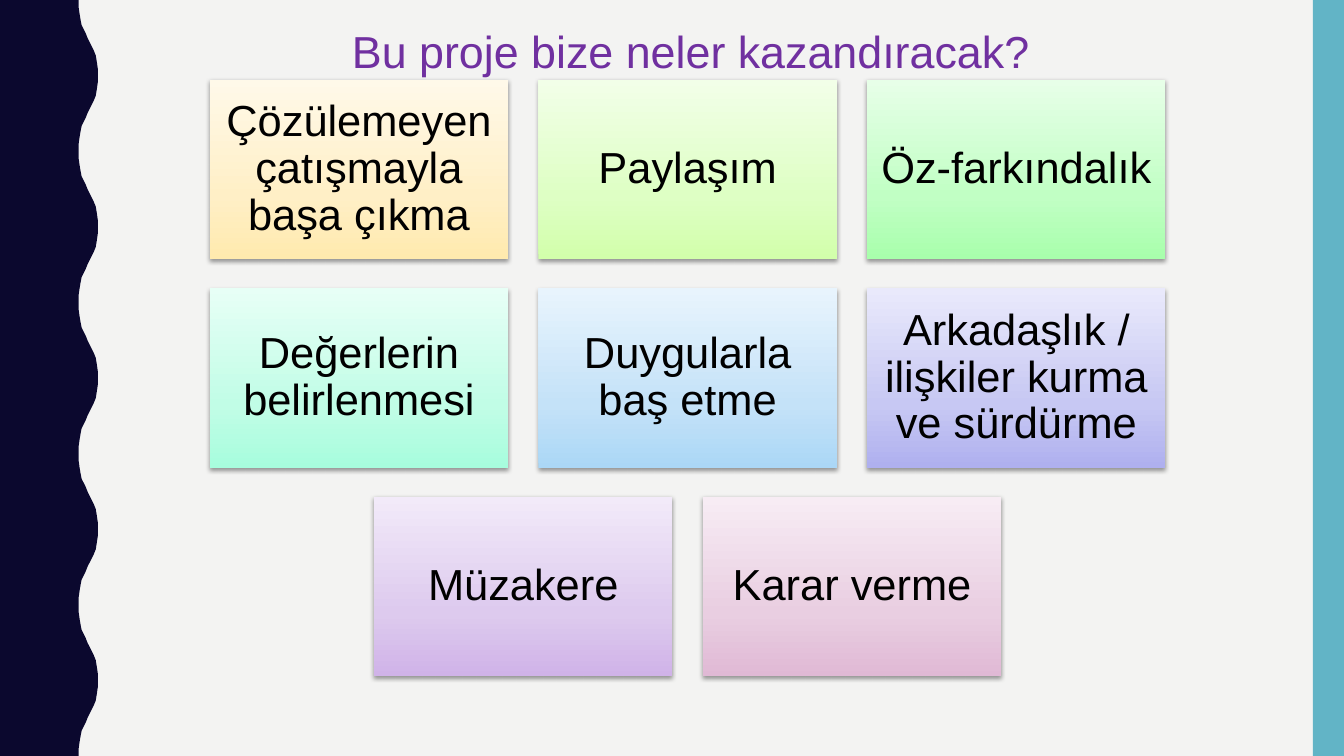
from dataclasses import dataclass

from lxml import etree
from pptx import Presentation
from pptx import util as u
from pptx.dml.color import RGBColor
from pptx.enum import shapes, text
from pptx.oxml import parse_xml
from pptx.oxml.ns import nsdecls, qn


@dataclass(frozen=True)
class Theme:
    font: str = "Arial"
    title_size: int = 32
    card_size: int = 31
    background: str = "F3F3F2"
    wave: str = "0B082E"
    band: str = "62B4C6"
    title: str = "7030A0"
    ink: str = "000000"


@dataclass(frozen=True)
class Grid:
    """Card grid in inches."""
    left: float = 2.08
    top: float = 0.79
    column: float = 3.26
    row: float = 2.07
    card_width: float = 2.96
    card_height: float = 1.78
    columns: int = 3


SLIDE_WIDTH, SLIDE_HEIGHT = 13.33, 7.5
TITLE = "Bu proje bize neler kazandıracak?"

# Rows of cards: label and gradient colours from bottom to top
CARD_ROWS = [
    [("Çözülemeyen çatışmayla başa çıkma", ("FFEAAE", "FFEFC6", "FFF9E9")),
     ("Paylaşım", ("D2FFAB", "DEFFC4", "F2FFE8")),
     ("Öz-farkındalık", ("A8FFAC", "C1FFC4", "E7FFE8"))],
    [("Değerlerin belirlenmesi", ("A7FDDD", "C1FDE6", "E7FFF6")),
     ("Duygularla baş etme", ("ABD7F6", "C4E2F8", "E8F4FD")),
     ("Arkadaşlık / ilişkiler kurma ve sürdürme", ("AFB0EF", "C7C8F3", "E9E9FB"))],
    [("Müzakere", ("D0B3E8", "DDCAEE", "F2EAF9")),
     ("Karar verme", ("E0B9D5", "E9CEE1", "F7ECF4"))],
]
GRADIENT_STOPS = (0, 35, 100)

# Half a wave, from trough to crest, in hundredths of an inch
HALF_WAVE = [(78, 0), (78, 7), (79, 14), (80, 20), (81, 25), (83, 29), (85, 33),
             (87, 38), (89, 42), (91, 46), (93, 50), (95, 55), (96, 61), (97, 68), (97, 75)]
HALF_PERIOD = 75
HALF_WAVES = 10


class SlideBuilder:
    def __init__(self, presentation, theme, grid):
        self.theme, self.grid = theme, grid
        self.slide = presentation.slides.add_slide(presentation.slide_layouts[6])
        fill = self.slide.background.fill
        fill.solid()
        fill.fore_color.rgb = RGBColor.from_string(theme.background)

    def paint(self, shape, color):
        shape.shadow.inherit = False
        shape.fill.solid()
        shape.fill.fore_color.rgb = RGBColor.from_string(color)
        shape.line.fill.background()

    def rectangle(self, left, top, width, height):
        return self.slide.shapes.add_shape(
            shapes.MSO_SHAPE.RECTANGLE, *map(u.Inches, (left, top, width, height)))

    def label(self, shape, words, size, color):
        shape.text_frame.word_wrap = True
        paragraph = shape.text_frame.paragraphs[0]
        paragraph.alignment = text.PP_ALIGN.CENTER
        run = paragraph.add_run()
        run.text = words
        run.font.name = self.theme.font
        run.font.size = u.Pt(size)
        run.font.color.rgb = RGBColor.from_string(color)
        return paragraph

    def wave(self):
        edge = []
        for index in range(HALF_WAVES):
            start = index * HALF_PERIOD
            if index % 2:
                points = [(x, HALF_PERIOD - y) for x, y in reversed(HALF_WAVE)]
            else:
                points = HALF_WAVE
            edge += [(x, start + y) for x, y in points[bool(index):]]
        builder = self.slide.shapes.build_freeform(0, 0, scale=u.Inches(0.01))
        builder.add_line_segments(edge + [(0, HALF_WAVES * HALF_PERIOD)], close=True)
        self.paint(builder.convert_to_shape(), self.theme.wave)

    def band(self, share):
        width = SLIDE_WIDTH * share
        self.paint(self.rectangle(SLIDE_WIDTH - width, 0, width, SLIDE_HEIGHT), self.theme.band)

    def gradient(self, shape, colors):
        shape.fill.gradient()
        shape.fill.gradient_angle = 90
        stops = shape.element.spPr.find(qn("a:gradFill")).find(qn("a:gsLst"))
        for stop in list(stops):
            stops.remove(stop)
        for position, color in zip(GRADIENT_STOPS, colors):
            stop = etree.SubElement(stops, qn("a:gs"), pos=str(position * 1000))
            etree.SubElement(stop, qn("a:srgbClr"), val=color)

    def soft_shadow(self, shape):
        shape.shadow.inherit = False
        effects = shape.element.spPr.find(qn("a:effectLst"))
        effects.append(parse_xml(
            f'<a:outerShdw {nsdecls("a")} blurRad="{u.Pt(3.1)}" dist="{u.Pt(1.6)}" '
            f'dir="5400000" rotWithShape="0"><a:srgbClr val="{self.theme.ink}">'
            '<a:alpha val="38000"/></a:srgbClr></a:outerShdw>'))

    def card(self, column, row, words, colors):
        grid = self.grid
        shape = self.rectangle(grid.left + column * grid.column, grid.top + row * grid.row,
                               grid.card_width, grid.card_height)
        self.gradient(shape, colors)
        shape.line.fill.background()
        self.soft_shadow(shape)
        frame = shape.text_frame
        frame.vertical_anchor = text.MSO_ANCHOR.MIDDLE
        frame.margin_left = frame.margin_right = u.Inches(0.13)
        frame.margin_top = frame.margin_bottom = u.Inches(0.13)
        paragraph = self.label(shape, words, self.theme.card_size, self.theme.ink)
        paragraph.line_spacing = 0.9

    def title(self, words):
        box = self.slide.shapes.add_textbox(*map(u.Inches, (2.16, 0.19, 9.39, 0.64)))
        box.text_frame.auto_size = text.MSO_AUTO_SIZE.SHAPE_TO_FIT_TEXT
        self.label(box, words, self.theme.title_size, self.theme.title)


def main():
    presentation = Presentation()
    presentation.slide_width = u.Inches(SLIDE_WIDTH)
    presentation.slide_height = u.Inches(SLIDE_HEIGHT)
    grid = Grid()
    builder = SlideBuilder(presentation, Theme(), grid)

    # Side decoration
    builder.wave()
    builder.band(0.31 / SLIDE_WIDTH)

    # Cards, with short rows centred
    for row, cards in enumerate(CARD_ROWS):
        indent = (grid.columns - len(cards)) / 2
        for column, (words, colors) in enumerate(cards):
            builder.card(column + indent, row, words, colors)

    # Heading
    builder.title(TITLE)
    presentation.save("out.pptx")


if __name__ == "__main__":
    main()
